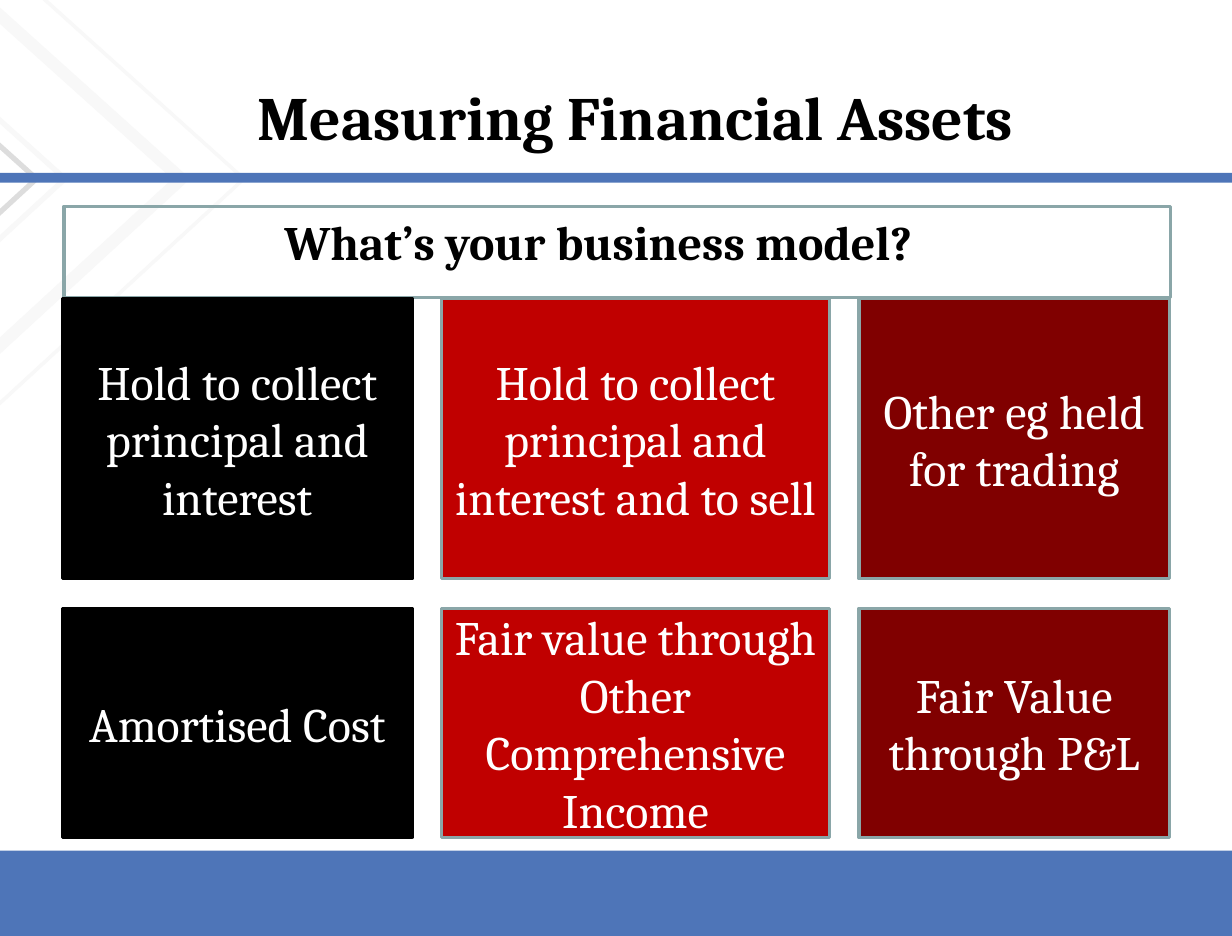
"""Build the slide on measuring financial assets by business model."""
from dataclasses import dataclass

from pptx import Presentation
from pptx.dml.color import RGBColor
from pptx.enum.shapes import MSO_SHAPE
from pptx.enum.text import MSO_ANCHOR, MSO_AUTO_SIZE, PP_ALIGN
from pptx.util import Cm, Pt

RECT = MSO_SHAPE.RECTANGLE
CENTER = PP_ALIGN.CENTER
TOP, MIDDLE = MSO_ANCHOR.TOP, MSO_ANCHOR.MIDDLE
NO_FIT = MSO_AUTO_SIZE.NONE


@dataclass(frozen=True)
class Theme:
    font: str = "Cambria"
    title_size: float = 35.4
    body_size: float = 27.6
    outline: float = 2
    black: str = "000000"
    white: str = "FFFFFF"
    blue: str = "4E75B8"
    red: str = "C00000"
    maroon: str = "800000"
    teal: str = "8AA6A8"
    grey: str = "DDDDDD"
    pale: str = "F8F8F8"


class Deck:
    def __init__(self, theme, width, height):
        self.theme = theme
        self.prs = Presentation()
        self.prs.slide_width, self.prs.slide_height = Cm(width), Cm(height)
        self.s = self.prs.slides.add_slide(self.prs.slide_layouts[5])

    def label(self, sp, text, size, color, bold=False, anchor=MIDDLE):
        tf = sp.text_frame
        frame = {"word_wrap": True, "auto_size": NO_FIT, "vertical_anchor": anchor,
                 "margin_left": Cm(0.25), "margin_right": Cm(0.25),
                 "margin_top": Cm(0.13), "margin_bottom": Cm(0.13)}
        for name, value in frame.items():
            setattr(tf, name, value)
        p = tf.paragraphs[0]
        p.alignment = CENTER
        r = p.add_run()
        r.text = text
        for name, value in {"name": self.theme.font, "size": Pt(size), "bold": bold}.items():
            setattr(r.font, name, value)
        r.font.color.rgb = RGBColor.from_string(color)

    def paint(self, sp, fill=None, line=None, weight=0):
        sp.shadow.inherit = False
        if fill:
            sp.fill.solid()
            sp.fill.fore_color.rgb = RGBColor.from_string(fill)
        else:
            sp.fill.background()
        if line:
            sp.line.color.rgb = RGBColor.from_string(line)
            sp.line.width = Pt(weight)
        else:
            sp.line.fill.background()

    def title(self, text, *box):
        sp = self.s.shapes.title
        sp.left, sp.top, sp.width, sp.height = map(Cm, box)
        self.label(sp, text, self.theme.title_size, self.theme.black, bold=True)

    def heading(self, text, *box):
        sp = self.s.shapes.add_textbox(*map(Cm, box))
        self.label(sp, text, self.theme.body_size, self.theme.black, bold=True, anchor=TOP)

    def box(self, *box, fill=None, line=None, text=None):
        sp = self.s.shapes.add_shape(RECT, *map(Cm, box))
        self.paint(sp, fill, line, self.theme.outline)
        if text:
            self.label(sp, text, self.theme.body_size, self.theme.white)

    def chevron(self, tip, color, weight):
        tip_y, rise, fall, bleed = 3.63, 0.9, 0.92, 0.25
        reach = min(tip + bleed, (tip_y + bleed) / rise)
        points = [(tip - reach, tip_y - rise * reach), (tip, tip_y),
                  (-bleed, tip_y + fall * (tip + bleed))]
        start, *rest = [(Cm(x), Cm(y)) for x, y in points]
        builder = self.s.shapes.build_freeform(*start)
        builder.add_line_segments(rest, close=False)
        self.paint(builder.convert_to_shape(), line=color, weight=weight)


def main():
    t = Theme()
    width, height = 25, 19
    deck = Deck(t, width, height)

    deck.box(0, 17.27, width, height - 17.27, fill=t.blue)
    for tip, color, weight in [(0.74, t.grey, 3), (1.32, t.pale, 3),
                               (3.68, t.pale, 7), (4.95, t.pale, 2)]:
        deck.chevron(tip, color, weight)
    deck.box(0, 3.51, width, 0.2, fill=t.blue)

    deck.title("Measuring Financial Assets", 3.05, 0.76, 19.69, 3.18)
    deck.heading("What’s your business model?", 0.89, 4.19, 22.5, 1.85)
    deck.box(1.3, 4.19, 22.45, 1.85, line=t.teal)

    gap = 0.6
    columns = [
        (7.09, t.black, t.black, "Hold to collect principal and interest", "Amortised Cost"),
        (7.87, t.red, t.teal, "Hold to collect principal and interest and to sell",
         "Fair value through Other Comprehensive Income"),
        (6.3, t.maroon, t.teal, "Other eg held for trading", "Fair Value through P&L"),
    ]
    left = 1.27
    for column_width, fill, line, *texts in columns:
        top = 6.06
        for row_height, text in zip((5.69, 4.65), texts):
            deck.box(left, top, column_width, row_height, fill=fill, line=line, text=text)
            top += row_height + gap
        left += column_width + gap

    deck.prs.save("out.pptx")


if __name__ == "__main__":
    main()
